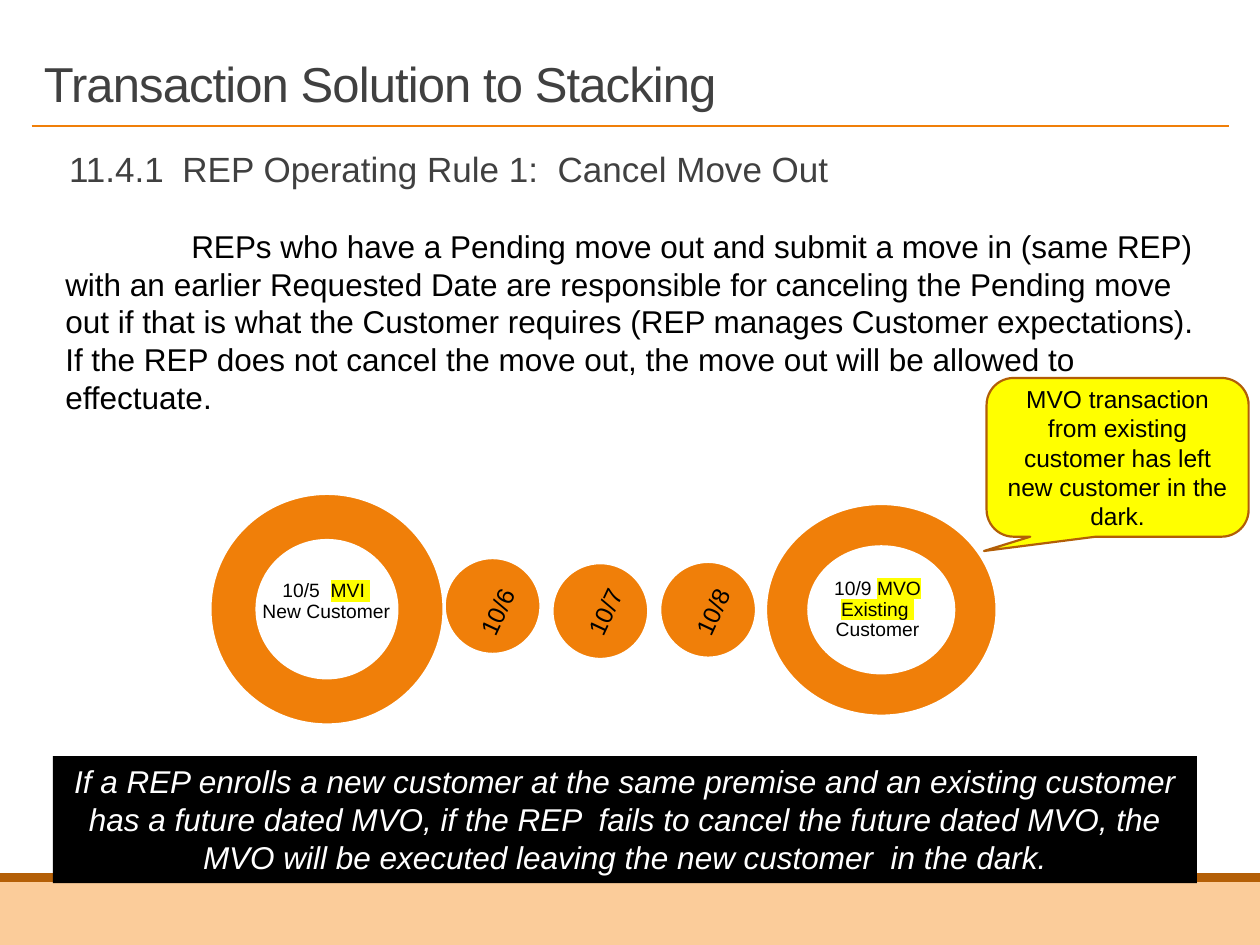
from dataclasses import dataclass

from lxml import etree
from pptx import Presentation
from pptx import util as u
from pptx.dml.color import RGBColor
from pptx.enum import shapes, text
from pptx.oxml import ns

SHAPE = shapes.MSO_SHAPE
ALIGN = text.PP_ALIGN
ANCHOR = text.MSO_ANCHOR


@dataclass(frozen=True)
class Theme:
    """Colours, font and type sizes of the deck."""
    font: str = "Arial"
    accent: str = "F07F09"
    dark_accent: str = "B45F07"
    callout_line: str = "B25E07"
    pale: str = "FBCC9A"
    yellow: str = "FFFF00"
    heading: str = "404040"
    black: str = "000000"
    white: str = "FFFFFF"
    title: int = 28
    subtitle: int = 20
    body: int = 18
    note: int = 14
    label: int = 11


class Deck:
    """Holds the theme and the current slide and draws elements on it."""

    def __init__(self, prs, theme):
        self.t = theme
        self.s = prs.slides.add_slide(prs.slide_layouts[6])

    def shape(self, kind, box, fill, line=None, adj=()):
        """Add a filled preset shape."""
        sp = self.s.shapes.add_shape(kind, *map(u.Inches, box))
        sp.shadow.inherit = False
        sp.fill.solid()
        sp.fill.fore_color.rgb = RGBColor.from_string(fill)
        if line:
            sp.line.color.rgb = RGBColor.from_string(line)
            sp.line.width = u.Pt(1.25)
        else:
            sp.line.fill.background()
        for i, value in enumerate(adj):
            sp.adjustments[i] = value
        return sp

    def rule(self, x1, x2, y):
        """Add a thin horizontal accent line."""
        ends = map(u.Inches, (x1, y, x2, y))
        cn = self.s.shapes.add_connector(shapes.MSO_CONNECTOR.STRAIGHT, *ends)
        cn.line.color.rgb = RGBColor.from_string(self.t.accent)
        cn.line.width = u.Pt(1)
        etree.SubElement(cn._element.spPr, ns.qn("a:effectLst"))

    def frame(self, tf, anchor=ANCHOR.TOP, insets=(0.1, 0.05, 0.1, 0.05)):
        """Set wrapping, anchor and insets of a text frame."""
        tf.word_wrap = True
        tf.vertical_anchor = anchor
        tf.margin_left, tf.margin_top, tf.margin_right, tf.margin_bottom = map(u.Inches, insets)
        return tf.paragraphs[0]

    def style(self, r, size, color, italic=None, highlight=None):
        """Format one run."""
        r.font.size = u.Pt(size)
        r.font.italic = italic
        r.font.color.rgb = RGBColor.from_string(color)
        if highlight:
            mark = etree.SubElement(r.font._element, ns.qn("a:highlight"))
            etree.SubElement(mark, ns.qn("a:srgbClr")).set("val", highlight)
        r.font.name = self.t.font

    def fill_text(self, sp, words, size, color, align=ALIGN.LEFT, spacing=None, italic=None, **frame):
        """Put one paragraph of uniform text into a shape."""
        p = self.frame(sp.text_frame, **frame)
        p.text = words
        p.alignment = align
        p.line_spacing = spacing
        for r in p.runs:
            self.style(r, size, color, italic)
        return p

    def textbox(self, box, words, size, color, **options):
        """Add a text box with one paragraph."""
        sp = self.s.shapes.add_textbox(*map(u.Inches, box))
        return sp, self.fill_text(sp, words, size, color, **options)

    def ring(self, box, label_box, lines):
        """Add a donut with a label whose marked words are highlighted."""
        self.shape(SHAPE.DONUT, box, self.t.accent, self.t.white, (0.2,))
        sp = self.s.shapes.add_textbox(*map(u.Inches, label_box))
        p = self.frame(sp.text_frame, ANCHOR.MIDDLE, (0.03, 0, 0, 0))
        p.alignment = ALIGN.CENTER
        p.line_spacing = 0.9
        for i, line in enumerate(lines):
            if i:
                p.add_line_break()
            for words, marked in line:
                r = p.add_run()
                r.text = words
                self.style(r, self.t.label, self.t.black, highlight=self.t.yellow if marked else None)

    def day(self, date, left, top):
        """Add a day circle with its slanted date."""
        self.shape(SHAPE.OVAL, (left, top, 0.76, 0.76), self.t.accent, self.t.white)
        sp, _ = self.textbox((left - 0.6, 4.99, 1.58, 0.76), date, self.t.note, self.t.black,
                             align=ALIGN.RIGHT, spacing=0.9, anchor=ANCHOR.MIDDLE,
                             insets=(0, 0, 0.04, 0))
        sp.rotation = 295


def main():
    """Build the slide and save it."""
    prs = Presentation()
    prs.slide_width, prs.slide_height = u.Inches(10), u.Inches(7.5)
    t = Theme()
    d = Deck(prs, t)

    d.shape(SHAPE.RECTANGLE, (0, 7, 10, 0.5), t.pale)
    d.shape(SHAPE.RECTANGLE, (0, 6.93, 10, 0.07), t.dark_accent)
    d.rule(0.25, 9.75, 1)

    _, p = d.textbox((0.25, 0.25, 8.25, 0.69), "Transaction Solution to Stacking",
                     t.title, t.heading, spacing=0.85, anchor=ANCHOR.BOTTOM)
    p.runs[0].font._element.set("spc", "-50")

    _, p = d.textbox((0.45, 1.16, 9.34, 0.94), "11.4.1\tREP Operating Rule 1:  Cancel Move Out",
                     t.subtitle, t.heading, spacing=0.9, insets=(0.1, 0.05, 0, 0.05))
    tabs = etree.SubElement(p._p.get_or_add_pPr(), ns.qn("a:tabLst"))
    etree.SubElement(tabs, ns.qn("a:tab"), pos=str(u.Inches(0.9)), algn="l")

    banner = d.shape(SHAPE.RECTANGLE, (0.42, 6, 9.08, 1.01), t.black)
    d.fill_text(banner, "If a REP enrolls a new customer at the same premise and an existing customer "
                "has a future dated MVO, if the REP  fails to cancel the future dated MVO, the MVO "
                "will be executed leaving the new customer  in the dark.",
                t.body, t.white, align=ALIGN.CENTER, italic=True)

    _, p = d.textbox((0.42, 1.75, 9.26, 1.92),
                     "REPs who have a Pending move out and submit a move in (same REP) with an "
                     "earlier Requested Date are responsible for canceling the Pending move out if "
                     "that is what the Customer requires (REP manages Customer expectations).  If "
                     "the REP does not cancel the move out, the move out will be allowed to "
                     "effectuate.", t.body, t.black)
    p._p.get_or_add_pPr().set("indent", str(u.Inches(1)))

    d.ring((1.67, 3.92, 1.85, 1.83), (1.98, 4.5, 1.19, 0.55),
           [[("10/5  ", False), ("MVI ", True)], [("New Customer", False)]])
    for i, (date, top) in enumerate([("10/6", 4.43), ("10/7", 4.47), ("10/8", 4.46)]):
        d.day(date, 3.53 + 0.855 * i, top)
    d.ring((6.08, 4, 1.83, 1.68), (6.31, 4.54, 1.28, 0.6),
           [[("10/9 ", False), ("MVO", True)], [("Existing ", True)], [("Customer", False)]])

    callout = d.shape(SHAPE.ROUNDED_RECTANGULAR_CALLOUT, (7.83, 3, 2.08, 1.26), t.yellow,
                      t.callout_line, (-0.51, 0.59, 0.17))
    d.fill_text(callout, "MVO transaction from existing customer has left new customer in the dark.",
                t.note, t.black, align=ALIGN.CENTER, anchor=ANCHOR.MIDDLE)

    prs.save("out.pptx")


if __name__ == "__main__":
    main()
